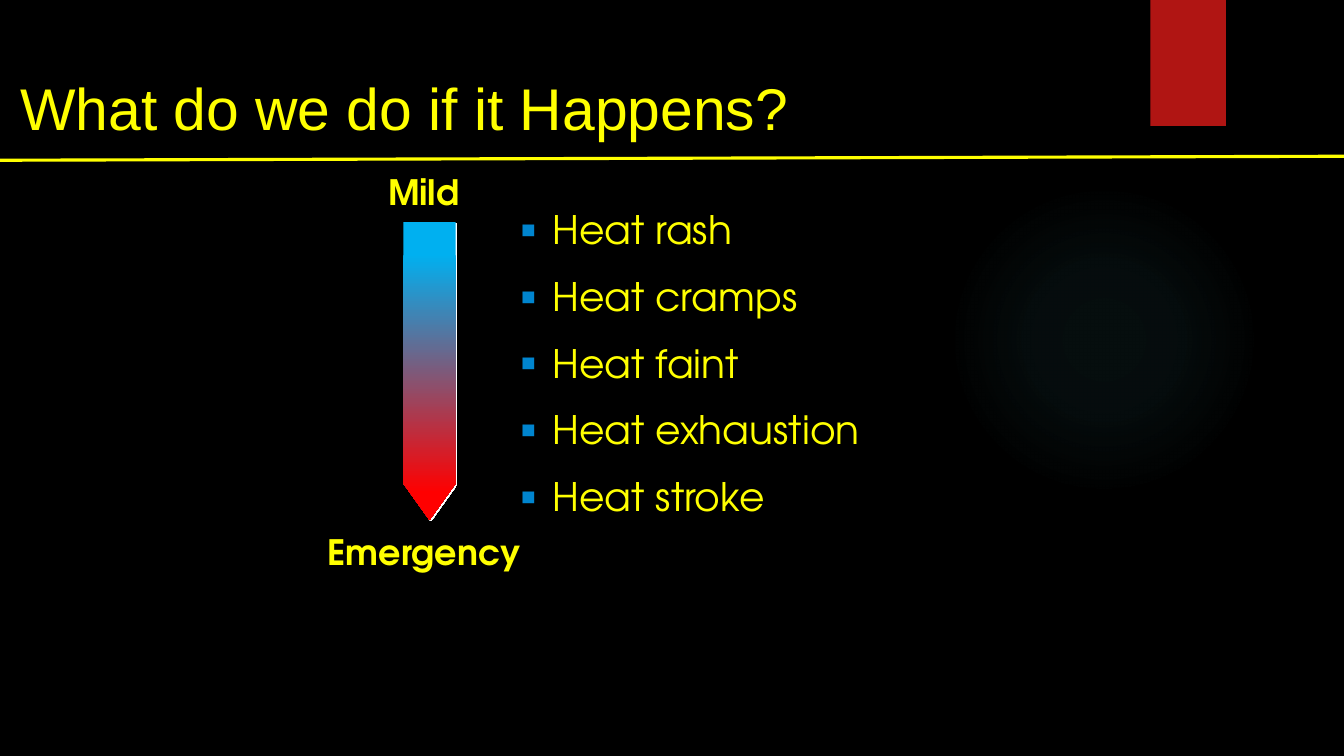
from dataclasses import dataclass

from lxml import etree
from pptx import Presentation
from pptx.dml.color import RGBColor
from pptx.enum.shapes import MSO_CONNECTOR, MSO_SHAPE
from pptx.enum.text import MSO_ANCHOR, MSO_AUTO_SIZE, PP_ALIGN
from pptx.oxml import parse_xml
from pptx.oxml.ns import nsdecls, qn
from pptx.util import Inches, Pt

OVAL, RECT, ARROW = MSO_SHAPE.OVAL, MSO_SHAPE.RECTANGLE, MSO_SHAPE.DOWN_ARROW
STRAIGHT = MSO_CONNECTOR.STRAIGHT
TOP, LEFT = MSO_ANCHOR.TOP, PP_ALIGN.LEFT
FIXED, GROW = MSO_AUTO_SIZE.NONE, MSO_AUTO_SIZE.SHAPE_TO_FIT_TEXT


@dataclass(frozen=True)
class Theme:
    back: str = "000000"
    text: str = "FFFF00"
    tab: str = "B01513"
    glow: str = "50B9C1"
    mild: str = "00B0F0"
    grave: str = "FF0000"
    mark: str = "0085CF"
    shade: str = "FFFFFF"
    head: str = "Arial"
    body: str = "TeX Gyre Adventor"
    title_size: int = 42
    list_size: int = 28
    label_size: int = 25


THEME = Theme()
SIGNS = ["Heat rash", "Heat cramps", "Heat faint", "Heat exhaustion", "Heat stroke"]


def color(code):
    return RGBColor.from_string(code)


def apply(item, values):
    for name, value in values.items():
        setattr(item, name, value)


def style(font, face, size, bold=False):
    apply(font, {"name": face, "size": Pt(size), "bold": bold})
    font.color.rgb = color(THEME.text)


def set_frame(frame, inset, fit):
    side, edge = (Inches(n) for n in inset)
    apply(frame, {
        "word_wrap": True, "auto_size": fit, "vertical_anchor": TOP,
        "margin_left": side, "margin_right": side,
        "margin_top": edge, "margin_bottom": edge,
    })


def add_box(slide, area, inset, fit):
    box = slide.shapes.add_textbox(*map(Inches, area))
    set_frame(box.text_frame, inset, fit)
    return box.text_frame


def add_form(slide, kind, area):
    form = slide.shapes.add_shape(kind, *map(Inches, area))
    form.shadow.inherit = False
    form.line.fill.background()
    return form


def fade(form, stops, tail):
    """Fill a form with (percent, colour, opacity) stops."""
    marks = "".join(
        f'<a:gs pos="{at * 1000}"><a:srgbClr val="{code}">'
        f'<a:alpha val="{seen * 1000}"/></a:srgbClr></a:gs>'
        for at, code, seen in stops)
    fill = parse_xml(f'<a:gradFill {nsdecls("a")} rotWithShape="1">'
                     f'<a:gsLst>{marks}</a:gsLst>{tail}</a:gradFill>')
    form._element.spPr.find(qn("a:prstGeom")).addnext(fill)


def make_shade():
    return parse_xml(
        f'<a:effectLst {nsdecls("a")}>'
        f'<a:outerShdw blurRad="0" dist="{Pt(1.4)}" dir="2700000" algn="ctr" rotWithShape="0">'
        f'<a:srgbClr val="{THEME.shade}"/></a:outerShdw></a:effectLst>')


def add_title(slide, text):
    title = slide.shapes.title
    apply(title, {"left": Inches(0.1), "top": Inches(0.66),
                  "width": Inches(10.29), "height": Inches(1.53)})
    set_frame(title.text_frame, (0.1, 0.05), FIXED)
    title.text_frame.text = text
    line = title.text_frame.paragraphs[0]
    line.alignment = LEFT
    style(line.runs[0].font, THEME.head, THEME.title_size)


def add_glow(slide):
    glow = add_form(slide, OVAL, (9.41, 1.83, 3.08, 3.08))
    fade(glow, [(0, THEME.glow, 7), (36, THEME.glow, 6), (69, THEME.glow, 0)],
         '<a:path path="circle"><a:fillToRect l="50000" t="50000" r="50000" b="50000"/></a:path>')


def add_tab(slide):
    tab = add_form(slide, RECT, (11.41, 0, 0.75, 1.25))
    tab.fill.solid()
    tab.fill.fore_color.rgb = color(THEME.tab)


def add_label(slide, text, area):
    frame = add_box(slide, area, (0.11, 0.05), GROW)
    run = frame.paragraphs[0].add_run()
    run.text = text
    style(run.font, THEME.body, THEME.label_size, True)
    run._r.rPr.find(qn("a:solidFill")).addnext(make_shade())


def add_bullet(line):
    props = line._p.get_or_add_pPr()
    indent = Inches(0.32)
    props.set("marL", str(indent))
    props.set("indent", str(-indent))
    tint = etree.SubElement(props, qn("a:buClr"))
    etree.SubElement(tint, qn("a:srgbClr"), val=THEME.mark)
    etree.SubElement(props, qn("a:buSzPct"), val="120000")
    etree.SubElement(props, qn("a:buFont"), typeface=THEME.head)
    etree.SubElement(props, qn("a:buChar"), char="▪")


def add_list(slide, items, area):
    frame = add_box(slide, area, (0, 0), FIXED)
    gap = Pt(THEME.list_size / 4)
    for place, item in enumerate(items):
        line = frame.add_paragraph() if place else frame.paragraphs[0]
        add_bullet(line)
        apply(line, {"space_before": gap if place else Pt(0), "space_after": gap})
        run = line.add_run()
        run.text = item
        style(run.font, THEME.body, THEME.list_size)


def add_scale(slide):
    """Draw the arrow that runs from mild to grave."""
    scale = add_form(slide, ARROW, (4, 2.2, 0.52, 2.96))
    scale.adjustments[0] = 1
    scale.adjustments[1] = 0.7
    fade(scale, [(0, THEME.mild, 100), (11, THEME.mild, 100),
                 (91, THEME.grave, 100), (100, THEME.grave, 100)],
         '<a:lin ang="5400000" scaled="0"/>')
    props = scale._element.spPr
    props.replace(props.find(qn("a:effectLst")), make_shade())


def add_rule(slide):
    ends = map(Inches, (0, 1.59, 13.33, 1.55))
    rule = slide.shapes.add_connector(STRAIGHT, *ends)
    rule.line.color.rgb = color(THEME.text)
    rule.line.width = Pt(2.25)
    etree.SubElement(rule._element.spPr, qn("a:effectLst"))


def main():
    deck = Presentation()
    apply(deck, {"slide_width": Inches(13.33), "slide_height": Inches(7.5)})
    slide = deck.slides.add_slide(deck.slide_layouts[5])
    slide.background.fill.solid()
    slide.background.fill.fore_color.rgb = color(THEME.back)
    add_glow(slide)
    add_tab(slide)
    add_title(slide, "What do we do if it Happens?")
    add_label(slide, "Mild", (3.74, 1.64, 1.03, 0.53))
    add_list(slide, SIGNS, (5.16, 2.04, 3.98, 3.22))
    add_scale(slide)
    add_label(slide, "Emergency", (3.14, 5.21, 2.24, 0.53))
    add_rule(slide)
    deck.save("out.pptx")


if __name__ == "__main__":
    main()
